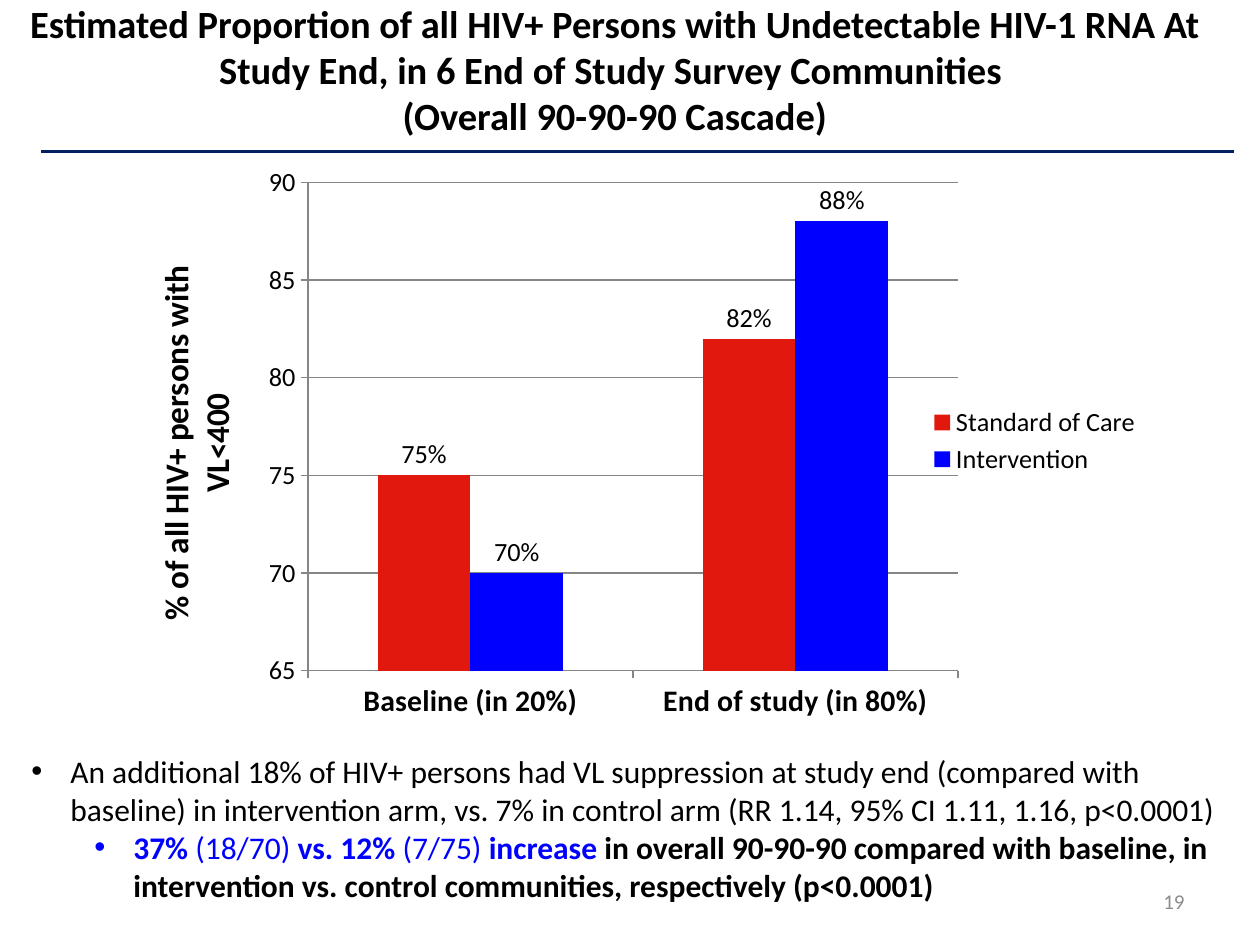
from lxml import etree
from pptx import Presentation
from pptx.chart.data import CategoryChartData
from pptx.dml.color import RGBColor
from pptx.enum.chart import XL_CHART_TYPE, XL_LABEL_POSITION, XL_LEGEND_POSITION, XL_TICK_MARK
from pptx.enum.shapes import MSO_SHAPE
from pptx.enum.text import MSO_ANCHOR, PP_ALIGN
from pptx.oxml import parse_xml
from pptx.oxml.ns import nsdecls, qn
from pptx.util import Inches, Pt

COLUMNS = XL_CHART_TYPE.COLUMN_CLUSTERED
OUTSIDE_END = XL_LABEL_POSITION.OUTSIDE_END
LEGEND_RIGHT = XL_LEGEND_POSITION.RIGHT
TICK_OUT = XL_TICK_MARK.OUTSIDE
RECTANGLE = MSO_SHAPE.RECTANGLE
TOP, MIDDLE = MSO_ANCHOR.TOP, MSO_ANCHOR.MIDDLE
LEFT, CENTER, RIGHT = PP_ALIGN.LEFT, PP_ALIGN.CENTER, PP_ALIGN.RIGHT

BLACK, BLUE, RED = "000000", "0000FF", "E1180D"
NAVY, WHITE, GRAY, AXIS_GRAY = "002060", "FFFFFF", "8C8C8C", "868686"


def rgb(value):
    return RGBColor.from_string(value)


class SlideBuilder:
    font_name = "Calibri"

    def __init__(self, slide):
        self.slide = slide

    def style(self, font, size, color=BLACK, bold=False):
        font.name = self.font_name
        font.size = Pt(size)
        font.bold = bold
        font.color.rgb = rgb(color)

    def text(self, box, paragraphs, size, color=BLACK, bold=False, align=LEFT, anchor=TOP):
        """Each paragraph is a string, or a list of (text, color, bold) runs."""
        frame = self.slide.shapes.add_textbox(*map(Inches, box)).text_frame
        frame.word_wrap = True
        frame.vertical_anchor = anchor
        for index, content in enumerate(paragraphs):
            paragraph = frame.paragraphs[0] if index == 0 else frame.add_paragraph()
            paragraph.alignment = align
            self.style(paragraph.font, size, color, bold)
            if isinstance(content, str):
                paragraph.add_run().text = content
                continue
            for words, run_color, run_bold in content:
                run = paragraph.add_run()
                run.text = words
                run.font.color.rgb = rgb(run_color)
                run.font.bold = run_bold
        return frame

    def bullet(self, paragraph, level, indent, color):
        paragraph.level = level
        properties = paragraph._p.get_or_add_pPr()
        properties.set("marL", str(Inches(indent)))
        properties.set("indent", str(-Inches(0.31)))
        marks = [
            f'<a:buClr {nsdecls("a")}><a:srgbClr val="{color}"/></a:buClr>',
            f'<a:buFont {nsdecls("a")} typeface="Arial"/>',
            f'<a:buChar {nsdecls("a")} char="•"/>',
        ]
        for position, mark in enumerate(marks):
            properties.insert(position, parse_xml(mark))

    def bar(self, box, fill, outline, width):
        bar = self.slide.shapes.add_shape(RECTANGLE, *map(Inches, box))
        bar.shadow.inherit = False
        bar.fill.solid()
        bar.fill.fore_color.rgb = rgb(fill)
        bar.line.color.rgb = rgb(outline)
        bar.line.width = Pt(width)

    def column_chart(self, box, categories, series, value_title, minimum, maximum, plot_area):
        data = CategoryChartData(number_format="General")
        data.categories = categories
        for name, values, _ in series:
            data.add_series(name, values)
        chart = self.slide.shapes.add_chart(COLUMNS, *map(Inches, box), data).chart
        self.style(chart.font, 15)
        chart.has_title = False
        chart.has_legend = True
        chart.legend.position = LEGEND_RIGHT
        chart.legend.include_in_layout = False

        # Columns and their labels
        plot = chart.plots[0]
        plot.gap_width, plot.overlap = 150, 0
        plot.vary_by_categories = False
        for column, (_, _, color) in zip(plot.series, series):
            column.format.fill.solid()
            column.format.fill.fore_color.rgb = rgb(color)
            column.invert_if_negative = False
            labels = column.data_labels
            labels.show_value = True
            labels.number_format = '0"%"'
            labels.number_format_is_linked = False
            labels.position = OUTSIDE_END

        # Axes
        category_axis, value_axis = chart.category_axis, chart.value_axis
        for axis in (category_axis, value_axis):
            axis.major_tick_mark = TICK_OUT
            axis.format.line.color.rgb = rgb(AXIS_GRAY)
        self.style(category_axis.tick_labels.font, 17, bold=True)
        value_axis.minimum_scale, value_axis.maximum_scale = minimum, maximum
        value_axis.major_unit = 5
        value_axis.major_gridlines.format.line.color.rgb = rgb(AXIS_GRAY)
        value_axis.axis_title.text_frame.text = value_title
        self.style(value_axis.axis_title.text_frame.paragraphs[0].font, 19, bold=True)

        # Fixed plot area, as fractions of the chart
        area = chart._chartSpace.chart.plotArea
        for old in area.findall(qn("c:layout")):
            area.remove(old)
        layout = parse_xml(f'<c:layout {nsdecls("c")}><c:manualLayout/></c:layout>')
        settings = [("layoutTarget", "inner"), ("xMode", "edge"), ("yMode", "edge")]
        settings += zip("xywh", map(str, plot_area))
        for tag, value in settings:
            etree.SubElement(layout[0], qn(f"c:{tag}")).set("val", value)
        area.insert(0, layout)


def main():
    deck = Presentation()
    deck.slide_width, deck.slide_height = Inches(10), Inches(7.5)
    builder = SlideBuilder(deck.slides.add_slide(deck.slide_layouts[6]))

    # Cascade chart
    builder.column_chart(
        (0.97, 1.22, 8.19, 4.56),
        ["Baseline (in 20%)", "End of study (in 80%)"],
        [("Standard of Care", (75, 82), RED), ("Intervention", (70, 88), BLUE)],
        "% of all HIV+ persons with VL<400",
        65, 90, (0.18, 0.05, 0.63, 0.85),
    )

    # Findings
    findings = builder.text((0.15, 5.92, 9.75, 1.31), [
        "An additional 18% of HIV+ persons had VL suppression at study end (compared with "
        "baseline) in intervention arm, vs. 7% in control arm (RR 1.14, 95% CI 1.11, 1.16, p<0.0001)",
        [
            ("37% ", BLUE, True),
            ("(18/70) ", BLUE, False),
            ("vs. 12% ", BLUE, True),
            ("(7/75)", BLUE, False),
            (" increase ", BLUE, True),
            ("in overall 90-90-90 compared with baseline, in intervention vs. control "
             "communities, respectively (p<0.0001)", BLACK, True),
        ],
    ], 18)
    builder.bullet(findings.paragraphs[0], 0, 0.31, BLACK)
    builder.bullet(findings.paragraphs[1], 1, 0.81, BLUE)

    # Title and rule below it
    builder.text((0.07, 0.11, 9.62, 0.88), [
        "Estimated Proportion of all HIV+ Persons with Undetectable HIV-1 RNA At "
        "Study End, in 6 End of Study Survey Communities ",
        "(Overall 90-90-90 Cascade)",
    ], 22, bold=True, align=CENTER, anchor=MIDDLE)
    builder.bar((0.31, 1.18, 9.5, 0.05), NAVY, WHITE, 2)

    # Slide number
    builder.text((7.17, 6.95, 2.33, 0.4), ["19"], 12, GRAY, align=RIGHT, anchor=MIDDLE)

    deck.save("out.pptx")


if __name__ == "__main__":
    main()
